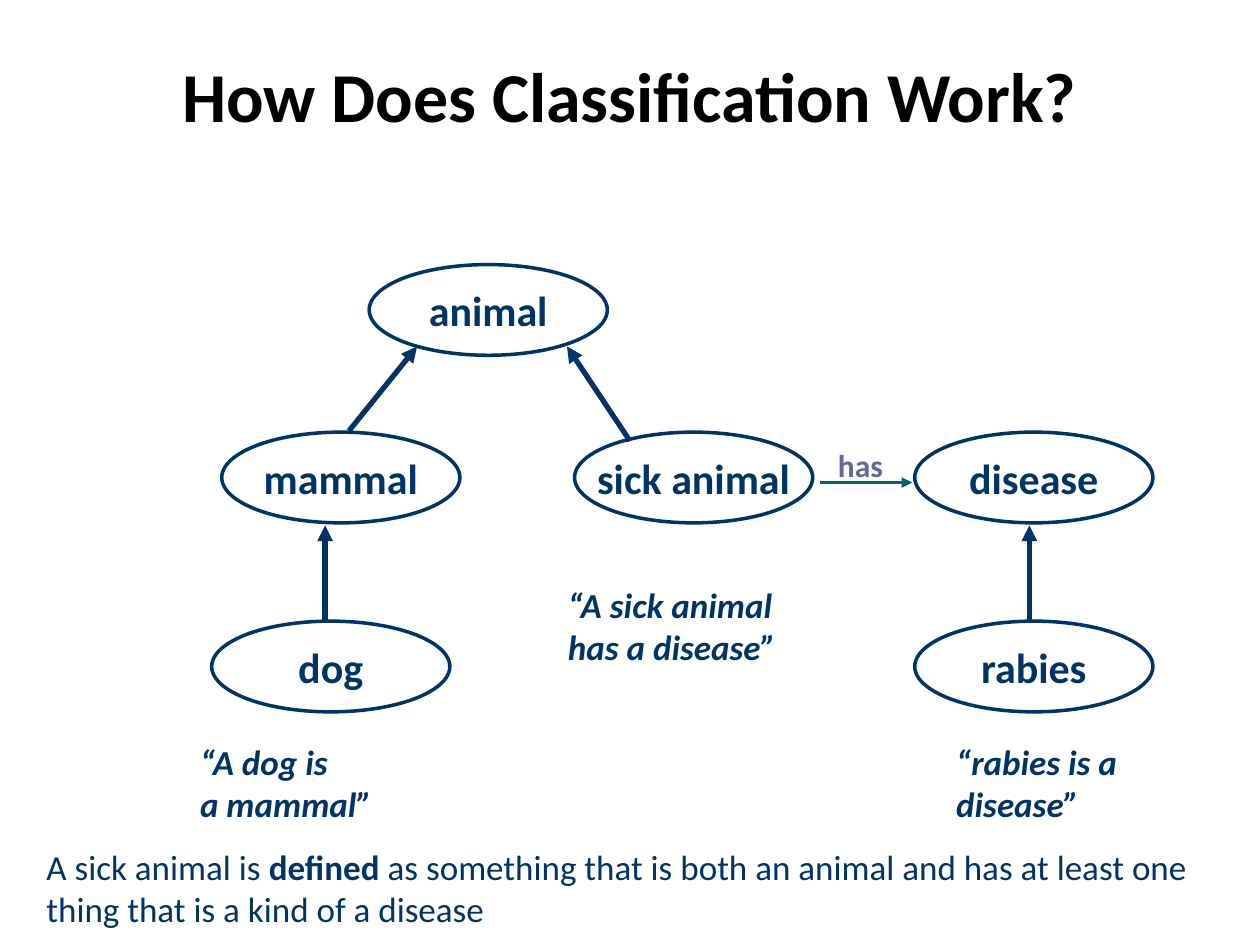
from dataclasses import dataclass

from lxml import etree
from pptx import Presentation
from pptx.dml.color import RGBColor
from pptx.enum.shapes import MSO_CONNECTOR, MSO_SHAPE
from pptx.enum.text import MSO_ANCHOR, MSO_AUTO_SIZE, PP_ALIGN
from pptx.oxml.ns import qn
from pptx.util import Inches, Pt

OVAL = MSO_SHAPE.OVAL
STRAIGHT = MSO_CONNECTOR.STRAIGHT
MIDDLE, BOTTOM = MSO_ANCHOR.MIDDLE, MSO_ANCHOR.BOTTOM
LEFT, CENTER = PP_ALIGN.LEFT, PP_ALIGN.CENTER
NO_AUTOFIT = MSO_AUTO_SIZE.NONE


@dataclass(frozen=True)
class Theme:
    font: str = "Calibri"
    black: RGBColor = RGBColor.from_string("000000")
    white: RGBColor = RGBColor.from_string("FFFFFF")
    navy: RGBColor = RGBColor.from_string("003366")
    teal: RGBColor = RGBColor.from_string("006666")
    violet: RGBColor = RGBColor.from_string("666699")
    title_size: Pt = Pt(40)
    concept_size: Pt = Pt(24)
    body_size: Pt = Pt(20)
    relation_size: Pt = Pt(18)
    outline: Pt = Pt(2)
    arrow: Pt = Pt(3)


theme = Theme()


def style(paragraph, size, color, alignment=LEFT, bold=None, italic=None):
    paragraph.alignment = alignment
    font = paragraph.font
    font.name = theme.font
    font.size = size
    font.color.rgb = color
    font.bold = bold
    font.italic = italic


def add_text_box(slide, left, top, width, height):
    text_box = slide.shapes.add_textbox(
        Inches(left), Inches(top), Inches(width), Inches(height)
    )
    text_box.text_frame.word_wrap = True
    return text_box.text_frame.paragraphs[0]


presentation = Presentation()
presentation.slide_width = Inches(10)
presentation.slide_height = Inches(7.5)
slide = presentation.slides.add_slide(presentation.slide_layouts[5])

title = slide.shapes.title
title.left, title.top = Inches(0.35), Inches(0.28)
title.width, title.height = Inches(9.29), Inches(0.86)
title_frame = title.text_frame
title_frame.text = "How Does Classification Work?"
title_frame.auto_size = NO_AUTOFIT
title_frame.vertical_anchor = BOTTOM
title_frame.paragraphs[0].line_spacing = 0.9
style(title_frame.paragraphs[0], theme.title_size, theme.black, CENTER, bold=True)

top_row, middle_row, bottom_row = 2.1, 3.43, 4.93
concepts = [
    ("animal", 2.93, top_row),
    ("mammal", 1.76, middle_row),
    ("dog", 1.68, bottom_row),
    ("sick animal", 4.56, middle_row),
    ("rabies", 7.26, bottom_row),
    ("disease", 7.26, middle_row),
]
for name, left, top in concepts:
    ellipse = slide.shapes.add_shape(
        OVAL, Inches(left), Inches(top), Inches(1.89), Inches(0.72)
    )
    ellipse.shadow.inherit = False
    ellipse.fill.solid()
    ellipse.fill.fore_color.rgb = theme.white
    ellipse.line.color.rgb = theme.navy
    ellipse.line.width = theme.outline
    frame = ellipse.text_frame
    frame.text = name
    frame.word_wrap = False
    frame.vertical_anchor = MIDDLE
    style(frame.paragraphs[0], theme.concept_size, theme.navy, CENTER, bold=True)

arrows = [
    (2.77, 3.42, 3.31, 2.75, theme.navy, theme.arrow),
    (5, 3.5, 4.5, 2.75, theme.navy, theme.arrow),
    (2.58, 4.92, 2.58, 4.17, theme.navy, theme.arrow),
    (8.17, 4.92, 8.17, 4.17, theme.navy, theme.arrow),
    (6.51, 3.83, 7.24, 3.83, theme.teal, theme.outline),
]
for start_x, start_y, end_x, end_y, color, width in arrows:
    connector = slide.shapes.add_connector(
        STRAIGHT, Inches(start_x), Inches(start_y), Inches(end_x), Inches(end_y)
    )
    connector.line.color.rgb = color
    connector.line.width = width
    line = connector.line._get_or_add_ln()
    etree.SubElement(line, qn("a:tailEnd"), type="triangle")
    etree.SubElement(connector._element.spPr, qn("a:effectLst"))

relation = add_text_box(slide, 6.41, 3.49, 0.84, 0.41)
relation.text = "has"
style(relation, theme.relation_size, theme.violet, CENTER, bold=True)

quotes = [
    ("“A dog is\na mammal”", 1.49, 5.83, 1.76),
    ("“A sick animal has a disease”", 4.41, 4.58, 2.26),
    ("“rabies is a disease”", 7.49, 5.83, 1.68),
]
for text, left, top, width in quotes:
    quote = add_text_box(slide, left, top, width, 0.78)
    quote.text = text
    style(quote, theme.body_size, theme.navy, bold=True, italic=True)

definition = add_text_box(slide, 0.27, 6.66, 9.37, 0.77)
style(definition, theme.body_size, theme.navy)
for text, bold in [
    ("A sick animal is ", False),
    ("defined", True),
    (" as something that is both an animal and has at least one "
     "thing that is a kind of a disease", False),
]:
    run = definition.add_run()
    run.text = text
    run.font.bold = bold

presentation.save("out.pptx")
